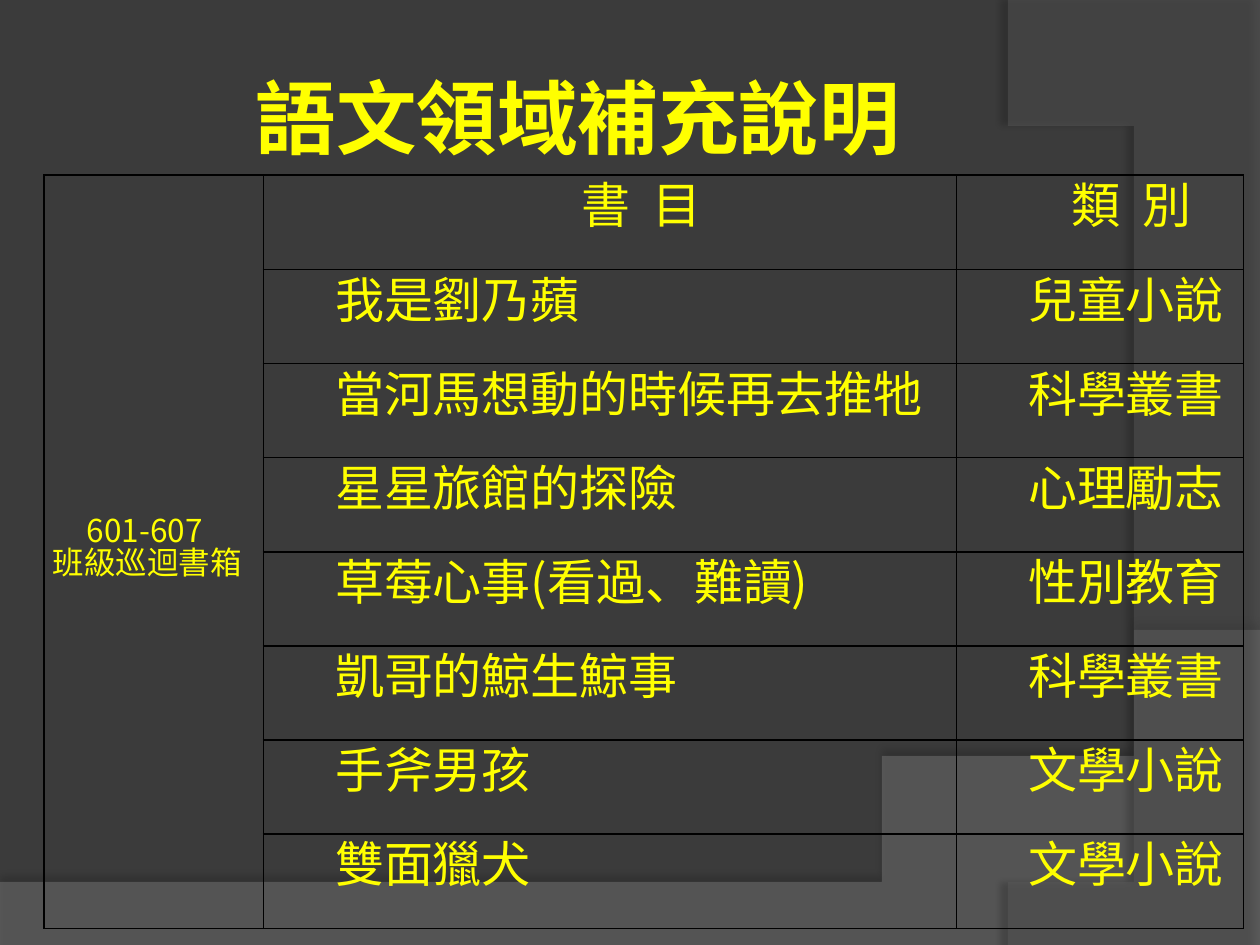
"""Build the slide listing the class reading-box books."""
from lxml.etree import SubElement
from pptx import Presentation
from pptx.dml.color import RGBColor
from pptx.enum.text import MSO_ANCHOR, PP_ALIGN
from pptx.oxml.ns import qn
from pptx.util import Inches, Pt

BACKGROUND, YELLOW, BLACK = "3B3B3B", "FFFF00", "000000"
TITLE_FONT, TABLE_FONT = "Cabin", "Noto Sans CJK SC"
TITLE = "語文領域補充說明"
BOX_LABEL = ["601-607", "班級巡迴書箱"]
BOOKS = [
    ("書  目", "類  別"),
    ("我是劉乃蘋", "兒童小說"),
    ("當河馬想動的時候再去推牠", "科學叢書"),
    ("星星旅館的探險", "心理勵志"),
    ("草莓心事(看過、難讀)", "性別教育"),
    ("凱哥的鯨生鯨事", "科學叢書"),
    ("手斧男孩", "文學小說"),
    ("雙面獵犬", "文學小說"),
]
TABLE_LEFT, TABLE_TOP, TABLE_HEIGHT = 0.35, 1.39, 5.98
COLUMN_WIDTHS = [1.74, 5.5, 2.28]
WAVES = [
    {"corners": [(0, 7.05), (0, 7.51), (10, 7.51), (10, 5.2)],
     "curve": [(10, 5.2), (5.59, 7.29), (3.91, 7.19), (0, 7.05)],
     "color": "7F7F7F", "opacity": 45,
     "shadow": {"opacity": 35, "blur": 4, "distance": 3.5, "angle": 270}},
    {"corners": [(10, 0.02), (10, 7.5), (8.21, 7.5)],
     "curve": [(8.21, 7.5), (9.35, 6.19), (10.18, 3), (8, 0)],
     "color": "5E5E5E", "opacity": 40,
     "shadow": {"opacity": 45, "blur": 4, "distance": 4, "angle": 180}},
]
CURVE_STEPS = 60


def color(value):
    return RGBColor.from_string(value)


def add_element(parent, tag, **attributes):
    return SubElement(parent, qn(tag), {key: str(value) for key, value in attributes.items()})


def apply(target, values):
    for name, value in values.items():
        setattr(target, name, value)


def curve_points(controls):
    for step in range(1, CURVE_STEPS + 1):
        t = step / CURVE_STEPS
        weights = ((1 - t) ** 3, 3 * t * (1 - t) ** 2, 3 * t * t * (1 - t), t ** 3)
        yield tuple(sum(w * point[axis] for w, point in zip(weights, controls)) for axis in (0, 1))


def add_wave(slide, wave):
    start, *corners = wave["corners"]
    builder = slide.shapes.build_freeform(*start, scale=Inches(1))
    builder.add_line_segments(corners + list(curve_points(wave["curve"])), close=True)
    shape = builder.convert_to_shape()
    shape.fill.solid()
    shape.fill.fore_color.rgb = color(wave["color"])
    shape.line.fill.background()
    shape.shadow.inherit = False
    properties = shape.element.spPr
    fill_color = properties.find(qn("a:solidFill"))[0]
    add_element(fill_color, "a:alpha", val=wave["opacity"] * 1000)
    shadow = wave["shadow"]
    outer = add_element(properties.find(qn("a:effectLst")), "a:outerShdw",
                        blurRad=Pt(shadow["blur"]), dist=Pt(shadow["distance"]),
                        dir=shadow["angle"] * 60000, algn="ctr", rotWithShape=0)
    shade = add_element(outer, "a:srgbClr", val=BLACK)
    add_element(shade, "a:alpha", val=shadow["opacity"] * 1000)


def write(paragraph, text, size, font, bold=False):
    run = paragraph.add_run()
    run.text = text
    apply(run.font, {"size": Pt(size), "name": font, "bold": bold})
    run.font.color.rgb = color(YELLOW)
    add_element(run.font._element, "a:ea", typeface=font)


def add_title(slide):
    box = slide.shapes.add_textbox(*map(Inches, (0.5, 0.3, 8.17, 1.25)))
    margins = {f"margin_{side}": Inches(0.05) for side in ("left", "right", "top", "bottom")}
    apply(box.text_frame, {"word_wrap": True, "vertical_anchor": MSO_ANCHOR.MIDDLE, **margins})
    paragraph = box.text_frame.paragraphs[0]
    paragraph.alignment = PP_ALIGN.CENTER
    write(paragraph, TITLE, 46, TITLE_FONT, bold=True)


def format_cell(cell):
    apply(cell, {"vertical_anchor": MSO_ANCHOR.MIDDLE, "margin_left": Inches(0.07),
                 "margin_right": Inches(0.07), "margin_top": 0, "margin_bottom": 0})
    properties = cell._tc.get_or_add_tcPr()
    for side in ("L", "R", "T", "B"):
        line = add_element(properties, f"a:ln{side}", w=Pt(1))
        add_element(add_element(line, "a:solidFill"), "a:srgbClr", val=BLACK)
    cell.fill.background()


def fill_paragraph(paragraph, text, size, indent=0, after=0, align=PP_ALIGN.LEFT):
    apply(paragraph, {"alignment": align, "line_spacing": Pt(18), "space_after": Pt(after)})
    properties = paragraph._p.get_or_add_pPr()
    properties.set("marL", str(Inches(indent)))
    properties.set("indent", "0")
    write(paragraph, text, size, TABLE_FONT)


def add_book_table(slide):
    frame = slide.shapes.add_table(
        len(BOOKS), len(COLUMN_WIDTHS), Inches(TABLE_LEFT), Inches(TABLE_TOP),
        Inches(sum(COLUMN_WIDTHS)), Inches(TABLE_HEIGHT))
    table = frame.table
    apply(table, {"first_row": False, "horz_banding": False})
    for column, width in zip(table.columns, COLUMN_WIDTHS):
        column.width = Inches(width)
    for row in table.rows:
        row.height = Inches(TABLE_HEIGHT / len(BOOKS))
    for cell in table.iter_cells():
        format_cell(cell)
    label = table.cell(0, 0)
    label.merge(table.cell(len(BOOKS) - 1, 0))
    fill_paragraph(label.text_frame.paragraphs[0], BOX_LABEL[0], 18, indent=0.27)
    fill_paragraph(label.text_frame.add_paragraph(), BOX_LABEL[1], 18)
    for row, book in enumerate(BOOKS):
        align = PP_ALIGN.LEFT if row else PP_ALIGN.CENTER
        for column, (text, after) in enumerate(zip(book, (0, 10)), start=1):
            paragraph = table.cell(row, column).text_frame.paragraphs[0]
            fill_paragraph(paragraph, text, 28, 0.5, after, align)


def main():
    presentation = Presentation()
    apply(presentation, {"slide_width": Inches(10), "slide_height": Inches(7.5)})
    slide = presentation.slides.add_slide(presentation.slide_layouts[6])
    slide.background.fill.solid()
    slide.background.fill.fore_color.rgb = color(BACKGROUND)
    for wave in WAVES:
        add_wave(slide, wave)
    add_title(slide)
    add_book_table(slide)
    presentation.save("out.pptx")


if __name__ == "__main__":
    main()
